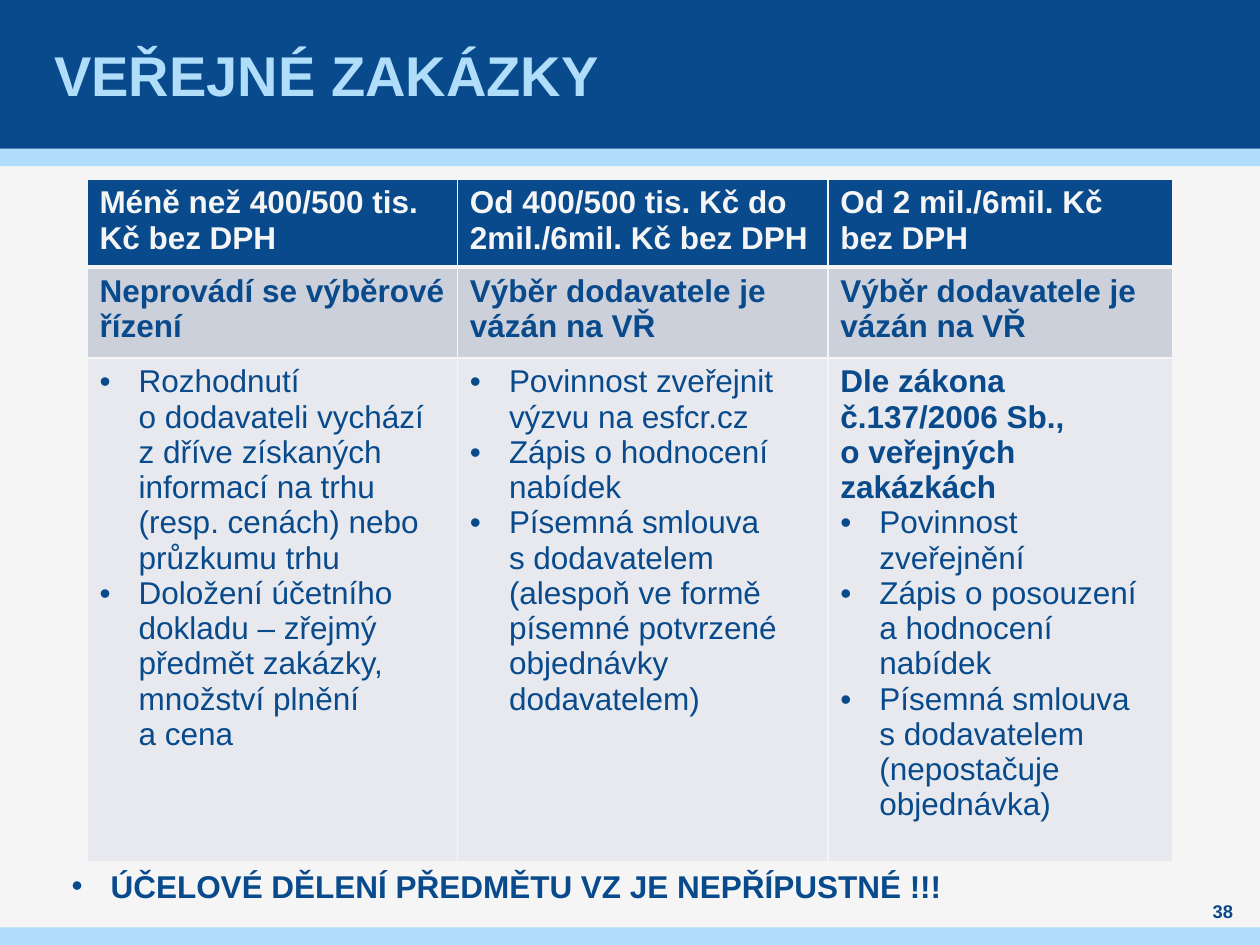
import pptx
import pptx.dml.color
import pptx.enum.shapes
import pptx.enum.text
import pptx.oxml.ns
import pptx.util
from lxml import etree
from pptx.util import Inches

NAVY, SKY, PAPER = "084A8B", "AFDDFA", "F5F5F5"
ROW_FILLS = [NAVY, "CCD0DA", "E7E9EE"]
COLUMN_WIDTHS = [2.94, 2.94, 2.74]
ROW_HEIGHTS = [0.66, 0.72, 3.74]
BULLET = "• "

PROCUREMENT = [
    [["Méně než 400/500 tis. Kč bez DPH"],
     ["Od 400/500 tis. Kč do 2mil./6mil. Kč bez DPH"],
     ["Od 2 mil./6mil. Kč bez DPH"]],
    [["Neprovádí se výběrové řízení"],
     ["Výběr dodavatele je vázán na VŘ"],
     ["Výběr dodavatele je vázán na VŘ"]],
    [["• Rozhodnutí \no dodavateli vychází z dříve získaných informací na trhu "
      "(resp. cenách) nebo průzkumu trhu",
      "• Doložení účetního dokladu – zřejmý předmět zakázky, množství plnění \na cena"],
     ["• Povinnost zveřejnit výzvu na esfcr.cz",
      "• Zápis o hodnocení nabídek",
      "• Písemná smlouva \ns dodavatelem (alespoň ve formě písemné potvrzené "
      "objednávky dodavatelem)"],
     ["Dle zákona č.137/2006 Sb., \no veřejných zakázkách",
      "• Povinnost zveřejnění",
      "• Zápis o posouzení a hodnocení nabídek",
      "• Písemná smlouva \ns dodavatelem (nepostačuje objednávka)"]],
]


def rgb(value):
    """Turn a hex string into a colour."""
    return pptx.dml.color.RGBColor.from_string(value)


def add_xml(parent, tag, **attributes):
    """Append a child element with the given attributes."""
    return etree.SubElement(parent, pptx.oxml.ns.qn(tag), **attributes)


class SlideBuilder:
    """Holds the deck style and the current slide."""

    font = "Arial"

    def __init__(self, deck):
        self.slide = deck.slides.add_slide(deck.slide_layouts[5])
        self.slide.background.fill.solid()
        self.slide.background.fill.fore_color.rgb = rgb(PAPER)

    def fill_paragraph(self, paragraph, text, size, color, bold=True):
        bulleted = text.startswith(BULLET)
        paragraph.text = text.removeprefix(BULLET)
        for run in paragraph.runs:
            run.font.name = self.font
            run.font.size = pptx.util.Pt(size)
            run.font.bold = bold
            run.font.color.rgb = rgb(color)
        if bulleted:
            properties = paragraph._p.get_or_add_pPr()
            properties.set("marL", str(Inches(0.31)))
            properties.set("indent", str(Inches(-0.31)))
            add_xml(properties, "a:buFont", typeface=self.font)
            add_xml(properties, "a:buChar", char=BULLET.strip())

    def band(self, top, height, color):
        band = self.slide.shapes.add_shape(
            pptx.enum.shapes.MSO_SHAPE.RECTANGLE,
            0, Inches(top), Inches(10), Inches(height))
        band.shadow.inherit = False
        band.fill.solid()
        band.fill.fore_color.rgb = rgb(color)
        band.line.fill.background()

    def title(self, text):
        title = self.slide.shapes.title
        self.slide.shapes._spTree.append(title._element)
        title.left, title.top = Inches(0.39), 0
        title.width, title.height = Inches(9.21), Inches(1.18)
        frame = title.text_frame
        frame.auto_size = pptx.enum.text.MSO_AUTO_SIZE.NONE
        frame.vertical_anchor = pptx.enum.text.MSO_ANCHOR.MIDDLE
        frame.margin_left = frame.margin_right = Inches(0.04)
        frame.margin_top = frame.margin_bottom = 0
        frame.paragraphs[0].alignment = pptx.enum.text.PP_ALIGN.LEFT
        self.fill_paragraph(frame.paragraphs[0], text, 32, SKY)

    def text(self, left, top, width, height, text, size):
        frame = self.slide.shapes.add_textbox(
            Inches(left), Inches(top), Inches(width), Inches(height)).text_frame
        frame.word_wrap = True
        self.fill_paragraph(frame.paragraphs[0], text, size, NAVY)
        return frame

    def page_number(self, number):
        frame = self.text(9.45, 7.13, 0.51, 0.2, number, 10.5)
        frame.margin_left = frame.margin_right = 0
        frame.margin_top = frame.margin_bottom = 0
        frame.vertical_anchor = pptx.enum.text.MSO_ANCHOR.MIDDLE
        frame.paragraphs[0].alignment = pptx.enum.text.PP_ALIGN.CENTER

    def borders(self, cell, row):
        top, bottom = (3 if row == 1 else 1), (3 if row == 0 else 1)
        for side, points in zip("LRTB", (1, 1, top, bottom)):
            line = add_xml(cell._tc.get_or_add_tcPr(), f"a:ln{side}",
                           w=str(pptx.util.Pt(points)))
            add_xml(add_xml(line, "a:solidFill"), "a:srgbClr", val=PAPER)

    def table(self, left, top, rows):
        table = self.slide.shapes.add_table(
            len(rows), len(COLUMN_WIDTHS), Inches(left), Inches(top),
            Inches(sum(COLUMN_WIDTHS)), Inches(sum(ROW_HEIGHTS))).table
        for column, width in zip(table.columns, COLUMN_WIDTHS):
            column.width = Inches(width)
        for index, (row, height) in enumerate(zip(rows, ROW_HEIGHTS)):
            table.rows[index].height = Inches(height)
            for column, lines in enumerate(row):
                cell = table.cell(index, column)
                self.borders(cell, index)
                cell.fill.solid()
                cell.fill.fore_color.rgb = rgb(ROW_FILLS[index])
                frame = cell.text_frame
                for position, line in enumerate(lines):
                    paragraph = frame.add_paragraph() if position else frame.paragraphs[0]
                    self.fill_paragraph(paragraph, line, 18, NAVY if index else PAPER,
                                        bold=not line.startswith(BULLET))


def main():
    """Build the slide and save it."""
    deck = pptx.Presentation()
    deck.slide_width, deck.slide_height = Inches(10), Inches(7.5)
    builder = SlideBuilder(deck)
    builder.band(1.18, 0.14, SKY)
    builder.band(0, 1.18, NAVY)
    builder.band(7.36, 0.14, SKY)
    builder.title("VEŘEJNÉ ZAKÁZKY")
    builder.page_number("38")
    builder.table(0.69, 1.42, PROCUREMENT)
    builder.text(0.47, 6.83, 9.06, 0.4,
                 "• ÚČELOVÉ DĚLENÍ PŘEDMĚTU VZ JE NEPŘÍPUSTNÉ !!!", 18)
    deck.save("out.pptx")


if __name__ == "__main__":
    main()
